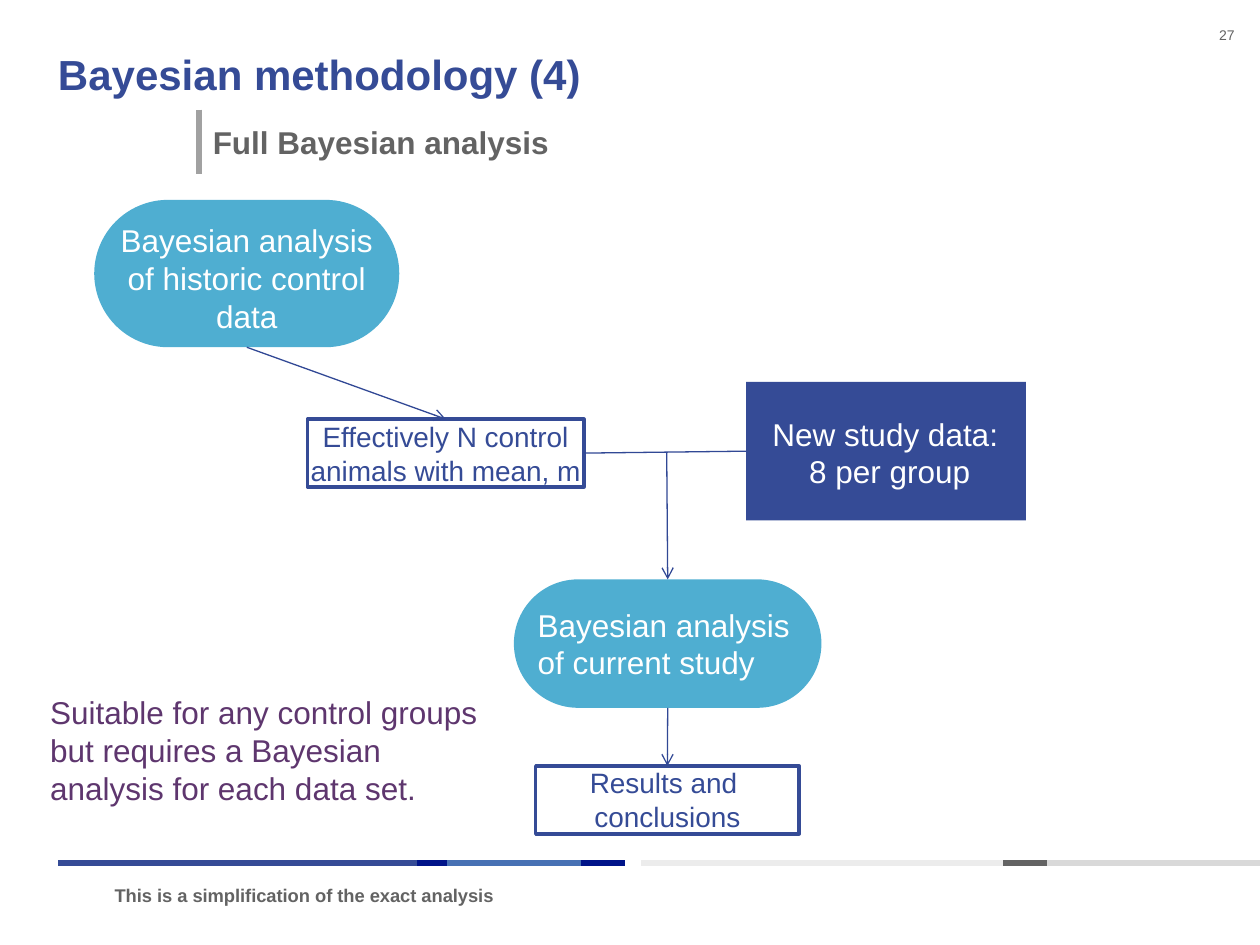
from lxml import etree
from pptx import Presentation
from pptx import util as u
from pptx.dml import color
from pptx.enum import shapes, text
from pptx.oxml import ns

Cm = u.Cm
NAVY, SKY, INK, GREY, WHITE = "354B96", "4FAED1", "314895", "636363", "FFFFFF"
TOP, MIDDLE = text.MSO_ANCHOR.TOP, text.MSO_ANCHOR.MIDDLE
LEFT, CENTER, RIGHT = text.PP_ALIGN.LEFT, text.PP_ALIGN.CENTER, text.PP_ALIGN.RIGHT
PILL, BOX = shapes.MSO_SHAPE.ROUNDED_RECTANGLE, shapes.MSO_SHAPE.RECTANGLE
SITE_TOP, SITE_LEFT, SITE_BOTTOM, SITE_RIGHT = range(4)

LABELS = [
    ((1.17, 0.97, 22.2, 1.02), "Bayesian methodology (4)", dict(size=24, hue=NAVY, bold=True)),
    ((23.77, 0.53, 1.12, 0.33), "27", dict(size=8, hue=GREY, align=RIGHT)),
    ((4.29, 2.01, 17.73, 1.7), "Full Bayesian analysis",
     dict(size=18, hue=GREY, bold=True, anchor=MIDDLE)),
    ((2.31, 17.83, 10.21, 0.84), "This is a simplification of the exact analysis",
     dict(size=10.5, hue=GREY, bold=True)),
    ((0.76, 13.84, 9.27, 2.57),
     "Suitable for any control groups but requires a Bayesian analysis for each data set.",
     dict(size=18, hue="5E366E", insets=(0.25, 0.13, 0.25, 0.13))),
]

NODES = {
    "historic": (PILL, (1.9, 4.03, 6.15, 2.97), SKY, "Bayesian analysis of historic control data",
                 dict(size=18, hue=WHITE, align=CENTER)),
    "prior": (BOX, (6.2, 8.45, 5.57, 1.37), None, "Effectively N control animals with mean, m",
              dict(size=16, hue=NAVY, align=CENTER, anchor=MIDDLE)),
    "new data": (BOX, (15.04, 7.7, 5.64, 2.79), NAVY, "New study data: \v8 per group",
                 dict(size=18, hue=WHITE, align=CENTER, insets=(0.15, 0.66, 0, 0))),
    "current": (PILL, (10.36, 11.68, 6.2, 2.59), SKY, "Bayesian analysis of current study",
                dict(size=18, hue=WHITE, insets=(0.1, 0.15, 0, 0))),
    "results": (BOX, (10.8, 15.44, 5.31, 1.37), None, "Results and \nconclusions",
                dict(size=16, hue=NAVY, align=CENTER)),
}

MERGE_POINT = (13.44, 9.12)
LINKS = [
    (("historic", SITE_BOTTOM), ("prior", SITE_TOP), True),
    (("prior", SITE_RIGHT), ("new data", SITE_LEFT), False),
    (MERGE_POINT, ("current", SITE_TOP), True),
    (("current", SITE_BOTTOM), ("results", SITE_TOP), True),
]

FOOTER_Y = 17.4
FOOTER_BANDS = [
    (1.17, [(8.41, NAVY), (9.02, "001489"), (11.71, "4771B4"), (12.6, "001489")]),
    (12.93, [(20.22, "ECECEC"), (21.11, GREY), (25.4, "D9D9D9")]),
]


def rgb(value):
    return color.RGBColor.from_string(value)


def write(frame, content, size, hue, bold=False, align=LEFT, anchor=TOP, insets=(0, 0, 0, 0)):
    frame.word_wrap = True
    frame.vertical_anchor = anchor
    (frame.margin_left, frame.margin_top,
     frame.margin_right, frame.margin_bottom) = map(Cm, insets)
    frame.text = content
    for paragraph in frame.paragraphs:
        paragraph.alignment = align
        font = paragraph.font
        font.name, font.size, font.bold = "Arial", u.Pt(size), bold
        font.color.rgb = rgb(hue)


def add_node(slide, preset, place, fill, content, style):
    node = slide.shapes.add_shape(preset, *map(Cm, place))
    node.shadow.inherit = False
    if preset == PILL:
        node.adjustments[0] = 0.5
    if fill:
        node.fill.solid()
        node.fill.fore_color.rgb = rgb(fill)
        node.line.fill.background()
    else:
        node.fill.background()
        node.line.color.rgb = rgb(NAVY)
        node.line.width = u.Pt(2)
    write(node.text_frame, content, **style)
    return node


def add_line(slide, start, end, hue, width, arrow=False):
    line = slide.shapes.add_connector(shapes.MSO_CONNECTOR.STRAIGHT, *map(Cm, (*start, *end)))
    line.line.color.rgb = rgb(hue)
    line.line.width = u.Pt(width)
    if arrow:
        etree.SubElement(line.line._get_or_add_ln(), ns.qn("a:tailEnd"), type="arrow")
    etree.SubElement(line._element.spPr, ns.qn("a:effectLst"))
    return line


def main():
    deck = Presentation()
    deck.slide_width, deck.slide_height = Cm(25.4), Cm(19.05)
    slide = deck.slides.add_slide(deck.slide_layouts[6])

    for left, bands in FOOTER_BANDS:
        for right, hue in bands:
            add_line(slide, (left, FOOTER_Y), (right, FOOTER_Y), hue, 3)
            left = right
    add_line(slide, (4.01, 2.21), (4.01, 3.5), "A1A1A1", 3)

    for place, content, style in LABELS:
        write(slide.shapes.add_textbox(*map(Cm, place)).text_frame, content, **style)

    nodes = {key: add_node(slide, *node) for key, node in NODES.items()}
    for start, (target, site), arrow in LINKS:
        link = add_line(slide, MERGE_POINT, MERGE_POINT, INK, 0.75, arrow)
        if start != MERGE_POINT:
            source, source_site = start
            link.begin_connect(nodes[source], source_site)
        link.end_connect(nodes[target], site)

    deck.save("out.pptx")


if __name__ == "__main__":
    main()
